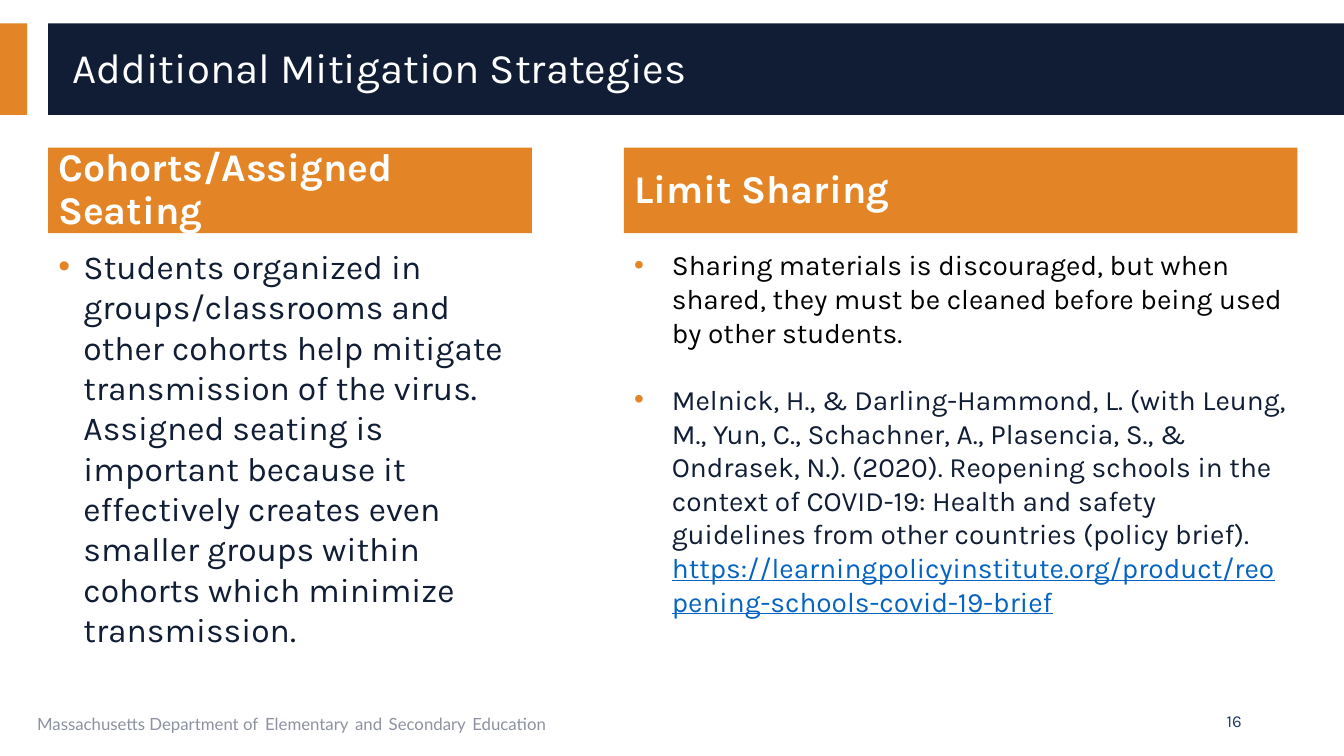
"""Build the slide on additional mitigation strategies."""
import pptx
import pptx.dml.color
import pptx.enum.shapes
import pptx.enum.text
import pptx.oxml
import pptx.oxml.ns
import pptx.util

Pt = pptx.util.Pt
Anchor = pptx.enum.text.MSO_ANCHOR
Align = pptx.enum.text.PP_ALIGN

ORANGE, NAVY, BLUE, GREY = "E38526", "101D35", "203B6A", "8D92A1"
WHITE, BLACK, LINK = "FFFFFF", "000000", "0563C1"


def colour(value):
    return pptx.dml.color.RGBColor.from_string(value)


class SlideBuilder:
    font = "Karla"

    def __init__(self, deck, layout_index):
        self.page = deck.slides.add_slide(deck.slide_layouts[layout_index])

    def band(self, left, top, width, height, fill):
        rectangle = pptx.enum.shapes.MSO_SHAPE.RECTANGLE
        box = self.page.shapes.add_shape(rectangle, Pt(left), Pt(top), Pt(width), Pt(height))
        box.shadow.inherit = False
        box.fill.solid()
        box.fill.fore_color.rgb = colour(fill)
        box.line.fill.background()
        self.page.shapes._spTree.insert(2, box._element)

    def prepare(self, box, anchor):
        frame = box.text_frame
        frame.word_wrap = True
        frame.auto_size = pptx.enum.text.MSO_AUTO_SIZE.NONE
        frame.vertical_anchor = anchor
        return frame

    def placeholder(self, index, left, top, width, height, anchor=Anchor.TOP, fill=None):
        box = self.page.placeholders[index]
        box.left, box.top, box.width, box.height = Pt(left), Pt(top), Pt(width), Pt(height)
        if fill:
            box.fill.solid()
            box.fill.fore_color.rgb = colour(fill)
        return self.prepare(box, anchor)

    def textbox(self, left, top, width, height, anchor=Anchor.TOP):
        box = self.page.shapes.add_textbox(Pt(left), Pt(top), Pt(width), Pt(height))
        return self.prepare(box, anchor)

    def add_span(self, para, text, size, tone, font=None, bold=False, underline=False):
        span = para.add_run()
        span.text = text
        span.font.name = font or self.font
        span.font.size = Pt(size)
        span.font.bold = bold
        span.font.underline = underline
        span.font.color.rgb = colour(tone)

    def layout(self, para, align=Align.LEFT, before=0, spacing=1.0):
        para.alignment = align
        para.space_before = Pt(before)
        para.line_spacing = spacing

    def heading(self, frame, text, size, bold):
        para = frame.paragraphs[0]
        self.layout(para, spacing=0.9)
        self.add_span(para, text, size, WHITE, bold=bold)

    def bullets(self, frame, items, size, indent, gap=0):
        for number, spans in enumerate(items):
            para = frame.add_paragraph() if number else frame.paragraphs[0]
            self.layout(para, before=gap if number else 0)
            self.bullet(para, indent)
            for text, tone, underline in spans:
                self.add_span(para, text, size, tone, underline=underline)

    def bullet(self, para, indent):
        properties = para._p.get_or_add_pPr()
        properties.set("marL", str(Pt(indent)))
        properties.set("indent", str(-Pt(indent)))
        space = pptx.oxml.ns.nsdecls("a")
        for markup in (
            f'<a:buClr {space}><a:srgbClr val="{ORANGE}"/></a:buClr>',
            f'<a:buFont {space} typeface="Arial"/>',
            f'<a:buChar {space} char="•"/>',
        ):
            properties.append(pptx.oxml.parse_xml(markup))


def main():
    deck = pptx.Presentation()
    deck.slide_width, deck.slide_height = Pt(960), Pt(540)
    slide = SlideBuilder(deck, 4)

    slide.band(0, 16.6, 19.5, 65.5, ORANGE)
    slide.band(34.4, 16.6, 925.6, 65.5, NAVY)
    title = slide.placeholder(0, 44.6, 23, 900, 53.3, Anchor.MIDDLE)
    slide.heading(title, "Additional Mitigation Strategies", 30, False)

    cohorts = [[(
        "Students organized in groups/classrooms and other cohorts help mitigate "
        "transmission of the virus. Assigned seating is important because it effectively "
        "creates even smaller groups within cohorts which minimize transmission.",
        NAVY, False)]]
    sharing = [
        [("Sharing materials is discouraged, but when shared, they must be cleaned "
          "before being used by other students.", BLACK, False)],
        [("Melnick, H., & Darling-Hammond, L. (with Leung, M., Yun, C., Schachner, A., "
          "Plasencia, S., & Ondrasek, N.). (2020). Reopening schools in the context of "
          "COVID-19: Health and safety guidelines from other countries (policy brief). ",
          NAVY, False),
         ("https://learningpolicyinstitute.org/product/reopening-schools-covid-19-brief",
          LINK, True)],
    ]
    columns = [
        (1, "Cohorts/Assigned Seating", 34.4, 345.6, 351.4, 172.1, cohorts, 24, 18),
        (3, "Limit Sharing", 445.7, 481, 481, 173.5, sharing, 20, 27),
    ]
    for index, name, left, head_width, list_width, top, items, size, indent in columns:
        head = slide.placeholder(index, left, 105.4, head_width, 61.2, Anchor.MIDDLE, ORANGE)
        slide.heading(head, name, 28, True)
        body = slide.placeholder(index + 1, left, top, list_width, 298.8)
        slide.bullets(body, items, size, indent, gap=24)

    footer = slide.textbox(19.5, 500.4, 607.7, 28.8).paragraphs[0]
    slide.layout(footer)
    words = ["Massachusetts Department of", "Elementary", "and", "Secondary", "Education"]
    for number, word in enumerate(words):
        if number:
            slide.add_span(footer, " ", 18, BLUE, font="Lato")
        slide.add_span(footer, word, 12, GREY, font="Lato")

    page_number = slide.textbox(678.2, 500.4, 216, 28.8, Anchor.MIDDLE).paragraphs[0]
    slide.layout(page_number, Align.RIGHT)
    slide.add_span(page_number, "16", 12, BLUE)

    deck.save("out.pptx")


if __name__ == "__main__":
    main()
